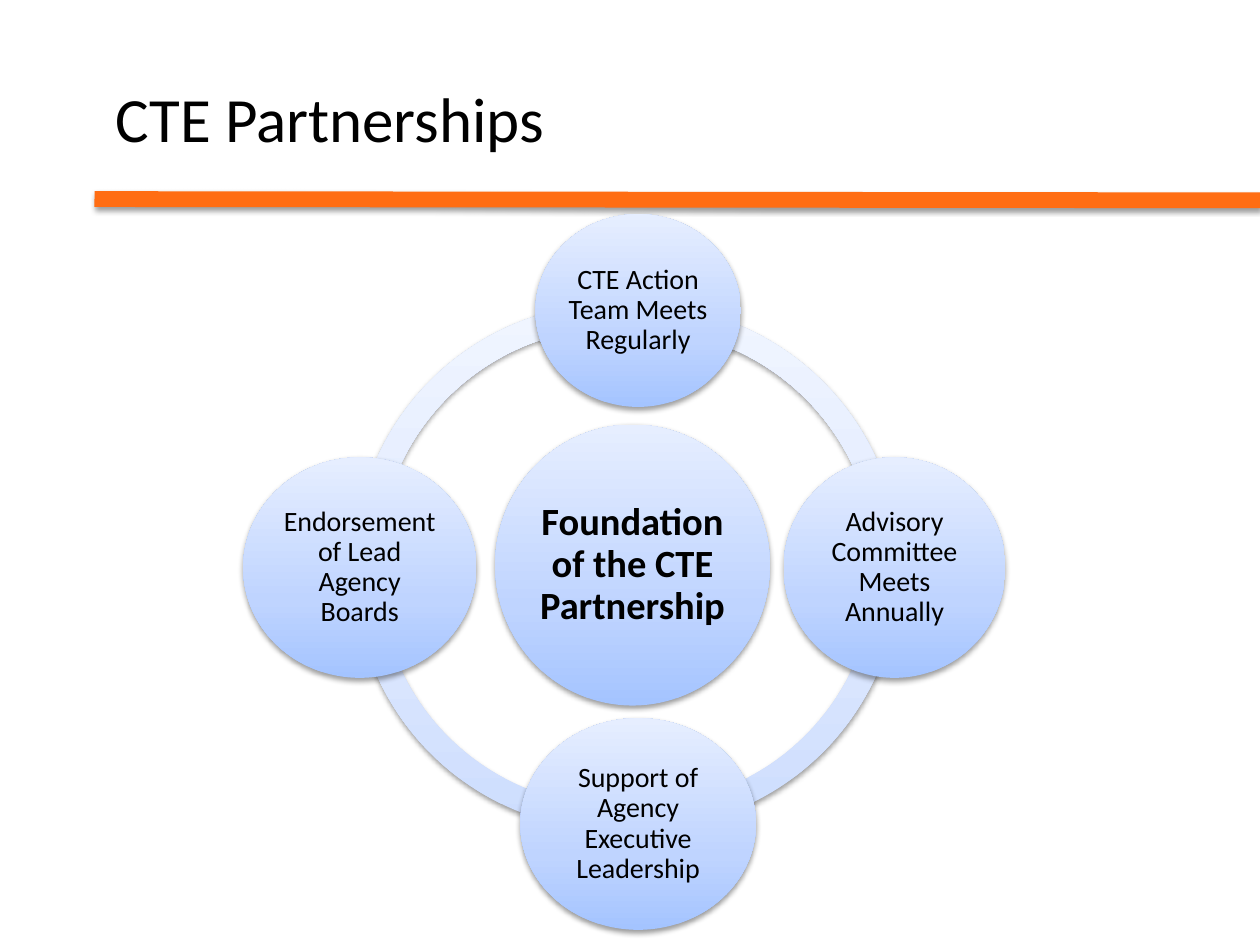
from lxml import etree
from pptx import Presentation
from pptx import util as u
from pptx.dml import color
from pptx.enum import shapes, text
from pptx.oxml import ns

COLUMNS, ROWS = 100, 75
CELL = u.Inches(10) // COLUMNS
FONT = "Calibri"
BLACK = "000000"
ORANGE = "FF6D13"
RING_STOPS = [(0, "CDDDFE"), (35, "DBE6FE"), (100, "F0F5FF")]
CIRCLE_STOPS = [(0, "A4C4FF"), (35, "BFD4FF"), (100, "E6EEFF")]
ARC_SIZE = 41.6
ARCS = [
    (28.1, 24.1, 179.8, 274.8),
    (28.1, 24.3, 85.2, 180.2),
    (29.8, 24.2, 0, 90),
    (29.8, 24.2, 270, 0),
]
HUB = ("Foundation of the CTE Partnership", (39.3, 33.7, 21.8, 22.3))
PARTNERS = [
    ("CTE Action Team Meets Regularly", (42.5, 17, 16.3, 15.3)),
    ("Advisory Committee Meets Annually", (62.2, 36.3, 17.6, 17.5)),
    ("Support of Agency Executive Leadership", (41.3, 57, 18.7, 16.8)),
    ("Endorsement of Lead Agency Boards", (19.3, 36.3, 18.5, 17.5)),
]


def cells(*counts):
    return [round(CELL * count) for count in counts]


def rgb(value):
    return color.RGBColor.from_string(value)


def add_color(parent, value):
    return etree.SubElement(parent, ns.qn("a:srgbClr"), val=value)


def add_shadow(shape):
    effects = etree.SubElement(shape._element.spPr, ns.qn("a:effectLst"))
    shadow = etree.SubElement(
        effects, ns.qn("a:outerShdw"), blurRad="40000", dist="20000",
        dir="5400000", rotWithShape="0")
    etree.SubElement(add_color(shadow, BLACK), ns.qn("a:alpha"), val="38000")


def fill_gradient(shape, stops):
    shape.fill.gradient()
    shape.fill.gradient_angle = 90
    stop_list = shape._element.spPr.find(".//" + ns.qn("a:gsLst"))
    for old_stop in list(stop_list):
        stop_list.remove(old_stop)
    for percent, value in stops:
        stop = etree.SubElement(stop_list, ns.qn("a:gs"), pos=str(percent * 1000))
        add_color(stop, value)


def add_gradient_shape(page, kind, area, stops):
    shape = page.shapes.add_shape(kind, *cells(*area))
    fill_gradient(shape, stops)
    shape.line.fill.background()
    add_shadow(shape)
    return shape


def add_arc(page, left, top, start, end):
    arc = add_gradient_shape(
        page, shapes.MSO_SHAPE.BLOCK_ARC, (left, top, ARC_SIZE, ARC_SIZE), RING_STOPS)
    for index, value in enumerate((start * 0.6, end * 0.6, 0.046)):
        arc.adjustments[index] = value


def format_paragraph(para, size, spacing, bold=False):
    para.alignment = text.PP_ALIGN.CENTER
    para.line_spacing = spacing
    para.font.name = FONT
    para.font.size = u.Pt(size)
    para.font.bold = bold
    para.font.color.rgb = rgb(BLACK)


def add_circle(page, label, area, size, bold=False):
    circle = add_gradient_shape(page, shapes.MSO_SHAPE.OVAL, area, CIRCLE_STOPS)
    frame = circle.text_frame
    frame.word_wrap = True
    frame.vertical_anchor = text.MSO_ANCHOR.MIDDLE
    frame.margin_left = frame.margin_right = u.Inches(0.02)
    frame.margin_top = frame.margin_bottom = u.Inches(0.02)
    frame.text = label
    format_paragraph(frame.paragraphs[0], size, 0.9, bold)


def add_title(page, label, area):
    title = page.shapes.title
    title.left, title.top, title.width, title.height = cells(*area)
    title.text_frame.text = label
    title.text_frame.vertical_anchor = text.MSO_ANCHOR.MIDDLE
    format_paragraph(title.text_frame.paragraphs[0], 36, u.Pt(40))


def add_rule(page, *ends):
    rule = page.shapes.add_connector(shapes.MSO_CONNECTOR.STRAIGHT, *cells(*ends))
    rule.line.color.rgb = rgb(ORANGE)
    rule.line.width = u.Pt(9)
    add_shadow(rule)


def main():
    deck = Presentation()
    deck.slide_width, deck.slide_height = cells(COLUMNS, ROWS)
    page = deck.slides.add_slide(deck.slide_layouts.get_by_name("Title Only"))
    add_rule(page, 7.5, 15.8, COLUMNS, 15.9)
    add_title(page, "CTE Partnerships", (7.4, 3.3, 37.6, 12.5))
    for arc in ARCS:
        add_arc(page, *arc)
    add_circle(page, *HUB, size=22, bold=True)
    for label, area in PARTNERS:
        add_circle(page, label, area, size=16)
    deck.save("out.pptx")


if __name__ == "__main__":
    main()
